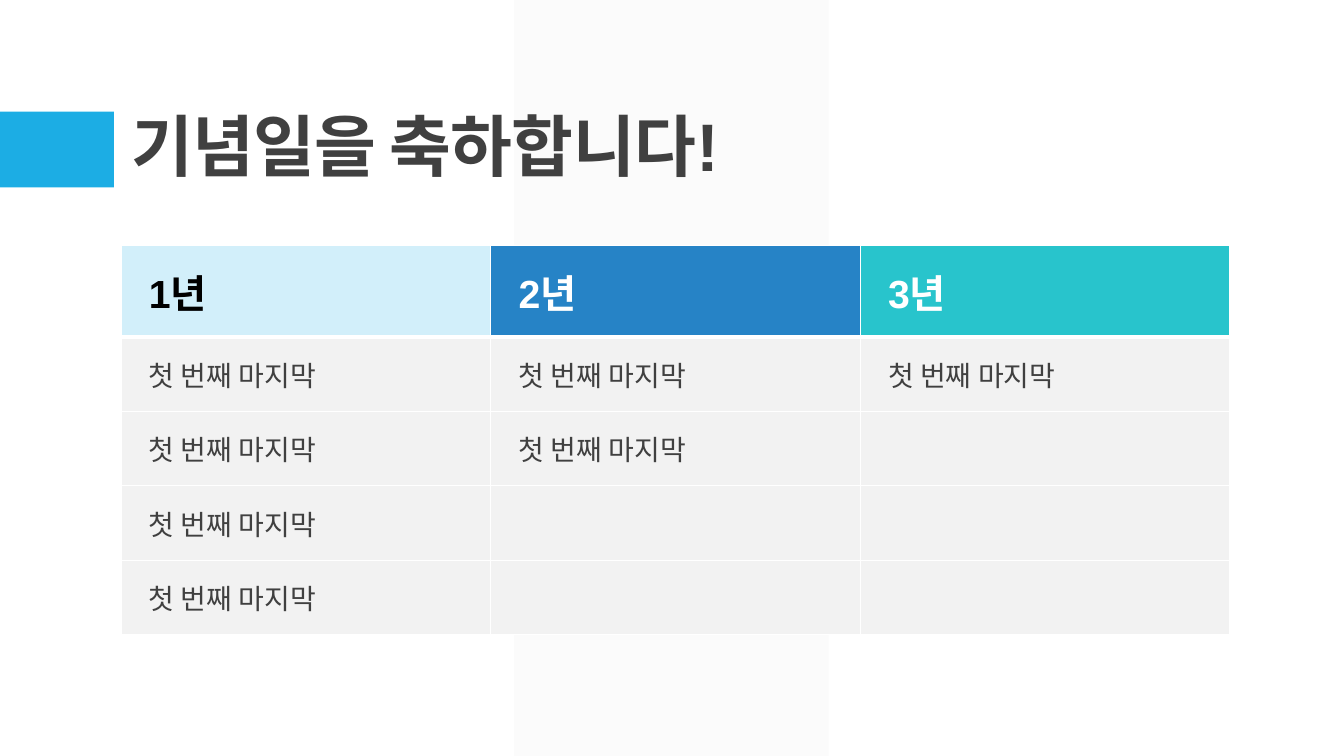
"""Build an anniversary slide with a three-year table."""
from lxml import etree
from pptx import Presentation
from pptx.dml.color import RGBColor
from pptx.enum.shapes import MSO_SHAPE
from pptx.enum.text import MSO_ANCHOR, MSO_AUTO_SIZE, PP_ALIGN
from pptx.oxml.ns import qn
from pptx.util import Pt

TITLE = "기념일을 축하합니다!"
ENTRY = "첫 번째 마지막"
WHITE = RGBColor(0xFF, 0xFF, 0xFF)
BLACK = RGBColor(0, 0, 0)
DARK = RGBColor(0x40, 0x40, 0x40)
PALE_GRAY = RGBColor(0xF2, 0xF2, 0xF2)
ACCENT = RGBColor(0x1C, 0xAD, 0xE4)
YEARS = [
    ("1년", RGBColor(0xD2, 0xEF, 0xFA), BLACK, 4),
    ("2년", RGBColor(0x26, 0x83, 0xC6), WHITE, 2),
    ("3년", RGBColor(0x28, 0xC4, 0xCC), WHITE, 1),
]
ENTRY_ROWS = 4
PAGE_WIDTH, PAGE_HEIGHT = 960, 540
LEFT, CONTENT_WIDTH = 86.4, 792
TABLE_TOP, HEADER_HEIGHT, ROW_HEIGHT = 175.2, 65.5, 53.2
FONT = "Arial"
RECTANGLE, PARALLELOGRAM = MSO_SHAPE.RECTANGLE, MSO_SHAPE.PARALLELOGRAM
MIDDLE, BOTTOM = MSO_ANCHOR.MIDDLE, MSO_ANCHOR.BOTTOM
ALIGN_LEFT, NO_FIT = PP_ALIGN.LEFT, MSO_AUTO_SIZE.NONE


def add_block(page, kind, left, top, width, height, color):
    block = page.shapes.add_shape(kind, Pt(left), Pt(top), Pt(width), Pt(height))
    block.shadow.inherit = False
    block.fill.solid()
    block.fill.fore_color.rgb = color
    block.line.fill.background()
    return block


def style_text(frame, size, color, bold):
    for para in frame.paragraphs:
        para.alignment = ALIGN_LEFT
        for span in para.runs:
            span.font.name = FONT
            span.font.size = Pt(size)
            span.font.bold = bold
            span.font.color.rgb = color


def add_border(cell, side, width):
    properties = cell._tc.get_or_add_tcPr()
    line = etree.SubElement(properties, qn(f"a:ln{side}"), w=str(Pt(width)))
    fill = etree.SubElement(line, qn("a:solidFill"))
    etree.SubElement(fill, qn("a:srgbClr"), val=str(WHITE))


def fill_cell(cell, text, size, color, bold, background, top, bottom):
    for side, width in (("L", 1), ("R", 1), ("T", top), ("B", bottom)):
        add_border(cell, side, width)
    cell.fill.solid()
    cell.fill.fore_color.rgb = background
    cell.vertical_anchor = MIDDLE
    cell.margin_left = cell.margin_right = Pt(20)
    cell.margin_top = cell.margin_bottom = Pt(5.76)
    cell.text_frame.text = text
    style_text(cell.text_frame, size, color, bold)


def add_title(page):
    title = page.shapes.title
    title.left, title.top = Pt(LEFT), Pt(22.3)
    title.width, title.height = Pt(CONTENT_WIDTH), Pt(114.5)
    frame = title.text_frame
    frame.text = TITLE
    frame.auto_size = NO_FIT
    frame.vertical_anchor = BOTTOM
    frame.paragraphs[0].line_spacing = 0.9
    style_text(frame, 48, DARK, True)
    frame.paragraphs[0].runs[0].font._element.set("spc", "-50")
    page.shapes.element.append(title.element)


def add_year_table(page):
    height = HEADER_HEIGHT + ENTRY_ROWS * ROW_HEIGHT
    table = page.shapes.add_table(
        ENTRY_ROWS + 1, len(YEARS), Pt(LEFT), Pt(TABLE_TOP), Pt(CONTENT_WIDTH), Pt(height)
    ).table
    table.horz_banding = False
    for index, row in enumerate(table.rows):
        row.height = Pt(ROW_HEIGHT if index else HEADER_HEIGHT)
    for column, (year, background, color, count) in enumerate(YEARS):
        table.columns[column].width = Pt(CONTENT_WIDTH / len(YEARS))
        fill_cell(table.cell(0, column), year, 28, color, True, background, 1, 3)
        for row in range(1, ENTRY_ROWS + 1):
            text = ENTRY if row <= count else ""
            top = 3 if row == 1 else 1
            fill_cell(table.cell(row, column), text, 20, DARK, False, PALE_GRAY, top, 1)


def main():
    deck = Presentation()
    deck.slide_width, deck.slide_height = Pt(PAGE_WIDTH), Pt(PAGE_HEIGHT)
    page = deck.slides.add_slide(deck.slide_layouts[5])
    band = add_block(page, PARALLELOGRAM, 367.2, 0, 224.8, PAGE_HEIGHT, PALE_GRAY)
    band.adjustments[0] = 0
    band_color = band.element.spPr.find(qn("a:solidFill")).find(qn("a:srgbClr"))
    etree.SubElement(band_color, qn("a:alpha"), val="30000")
    add_block(page, RECTANGLE, 0, 79.8, 81.4, 54, ACCENT)
    add_title(page)
    add_year_table(page)
    deck.save("out.pptx")


if __name__ == "__main__":
    main()
